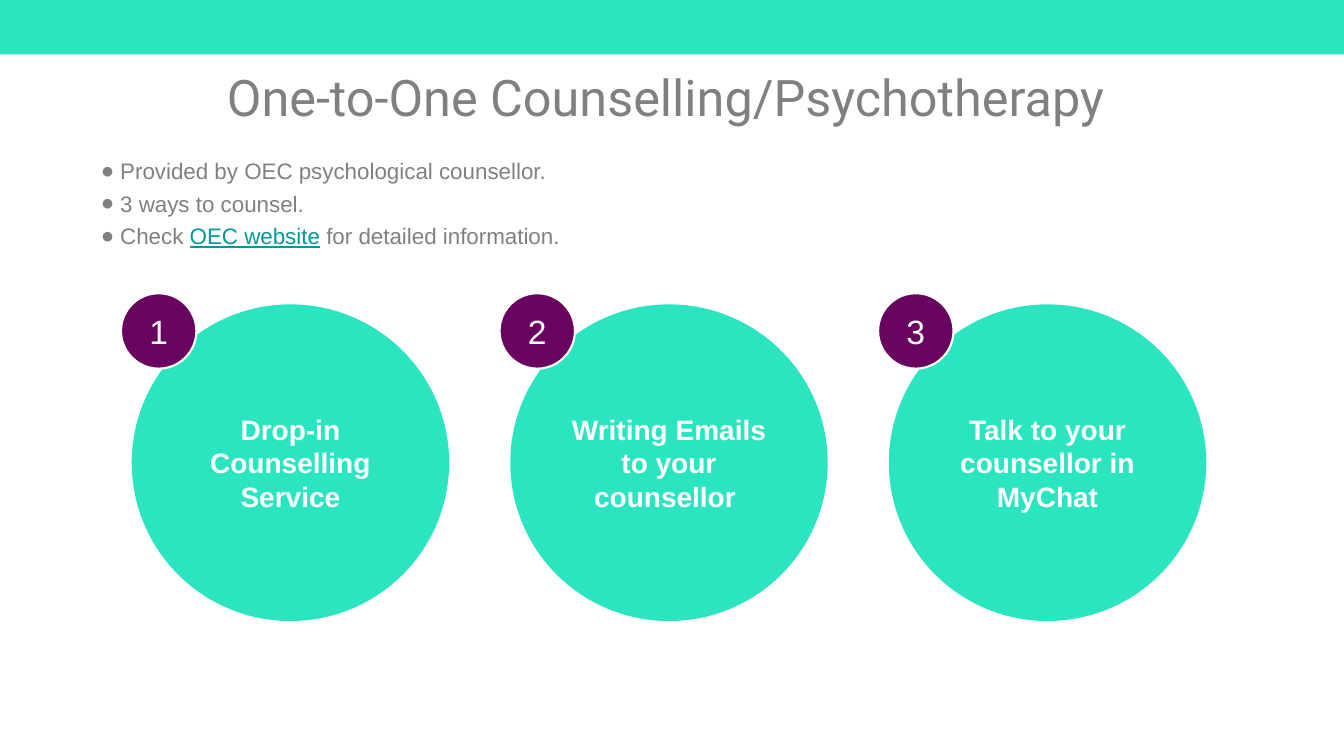
from pptx import Presentation
from pptx.dml.color import RGBColor
from pptx.enum.shapes import MSO_SHAPE as SHAPE
from pptx.enum.text import MSO_ANCHOR as ANCHOR, PP_ALIGN as ALIGN
from pptx.oxml.ns import qn
from pptx.util import Cm, Pt
from lxml.etree import SubElement

COLORS = {"teal": "2BE5C0", "plum": "68045F", "grey": "808080",
          "link": "009999", "white": "FFFFFF"}


def rgb(name):
    return RGBColor.from_string(COLORS[name])


def add_run(p, text, size=16, color="grey", font="Arial", bold=False,
            underline=False):
    r = p.add_run()
    r.text = text
    r.font.name = font
    r.font.size = Pt(size)
    r.font.bold = bold
    r.font.underline = underline
    r.font.color.rgb = rgb(color)


class SlideBuilder:
    """Holds the current slide and its shared style."""

    bullet = "●"
    bullet_indent = Cm(0.49)

    def __init__(self, slide):
        self.s = slide

    def shape(self, kind, x, y, w, h, fill, line=None):
        sp = self.s.shapes.add_shape(kind, Cm(x), Cm(y), Cm(w), Cm(h))
        sp.shadow.inherit = False
        sp.fill.solid()
        sp.fill.fore_color.rgb = rgb(fill)
        if line:
            sp.line.color.rgb = rgb(line)
            sp.line.width = Pt(1.5)
        else:
            sp.line.fill.background()
        return sp

    def disc(self, x, y, w, h, fill, text, line=None, **fmt):
        sp = self.shape(SHAPE.OVAL, x, y, w, h, fill, line)
        self.centred(sp.text_frame, text, color="white", **fmt)

    def centred(self, tf, text, **fmt):
        tf.word_wrap = True
        tf.vertical_anchor = ANCHOR.MIDDLE
        p = tf.paragraphs[0]
        p.alignment = ALIGN.CENTER
        add_run(p, text, **fmt)

    def textbox(self, x, y, w, h):
        tf = self.s.shapes.add_textbox(Cm(x), Cm(y), Cm(w), Cm(h)).text_frame
        tf.word_wrap = True
        return tf

    def title(self, x, y, w, h, text):
        self.centred(self.textbox(x, y, w, h), text, size=36, font="Roboto")

    def bullets(self, x, y, w, h, items):
        tf = self.textbox(x, y, w, h)
        for i, runs in enumerate(items):
            p = tf.add_paragraph() if i else tf.paragraphs[0]
            p.line_spacing = 1.2
            pPr = p._p.get_or_add_pPr()
            pPr.set("marL", str(self.bullet_indent))
            pPr.set("indent", str(-self.bullet_indent))
            SubElement(pPr, qn("a:buFont")).set("typeface", "Arial")
            SubElement(pPr, qn("a:buChar")).set("char", self.bullet)
            for text, fmt in runs:
                add_run(p, text, **fmt)


def main():
    prs = Presentation()
    prs.slide_width, prs.slide_height = Cm(33.87), Cm(19.05)
    b = SlideBuilder(prs.slides.add_slide(prs.slide_layouts[6]))

    # Top band and title
    b.shape(SHAPE.RECTANGLE, 0, 0, 33.87, 1.37, "teal")
    b.title(2.29, 1.37, 29.29, 2.13, "One-to-One Counselling/Psychotherapy ")

    # Introduction
    b.bullets(2.29, 3.71, 29.29, 2.79, [
        [("Provided by OEC psychological counsellor.", {})],
        [("3 ways to counsel.", {})],
        [("Check ", {}),
         ("OEC website", {"color": "link", "underline": True}),
         (" for detailed information.", {})],
    ])

    # Three numbered ways to counsel
    ways = ["Drop-in Counselling Service",
            "Writing Emails to your counsellor ",
            "Talk to your counsellor in MyChat"]
    left, pitch = 3.32, 9.54
    for i, way in enumerate(ways):
        x = left + i * pitch
        b.disc(x, 7.67, 8, 7.98, "teal", way, size=20, bold=True)
        b.disc(x - 0.27, 7.39, 1.9, 1.9, "plum", str(i + 1), line="white",
               size=24)

    prs.save("out.pptx")


if __name__ == "__main__":
    main()
